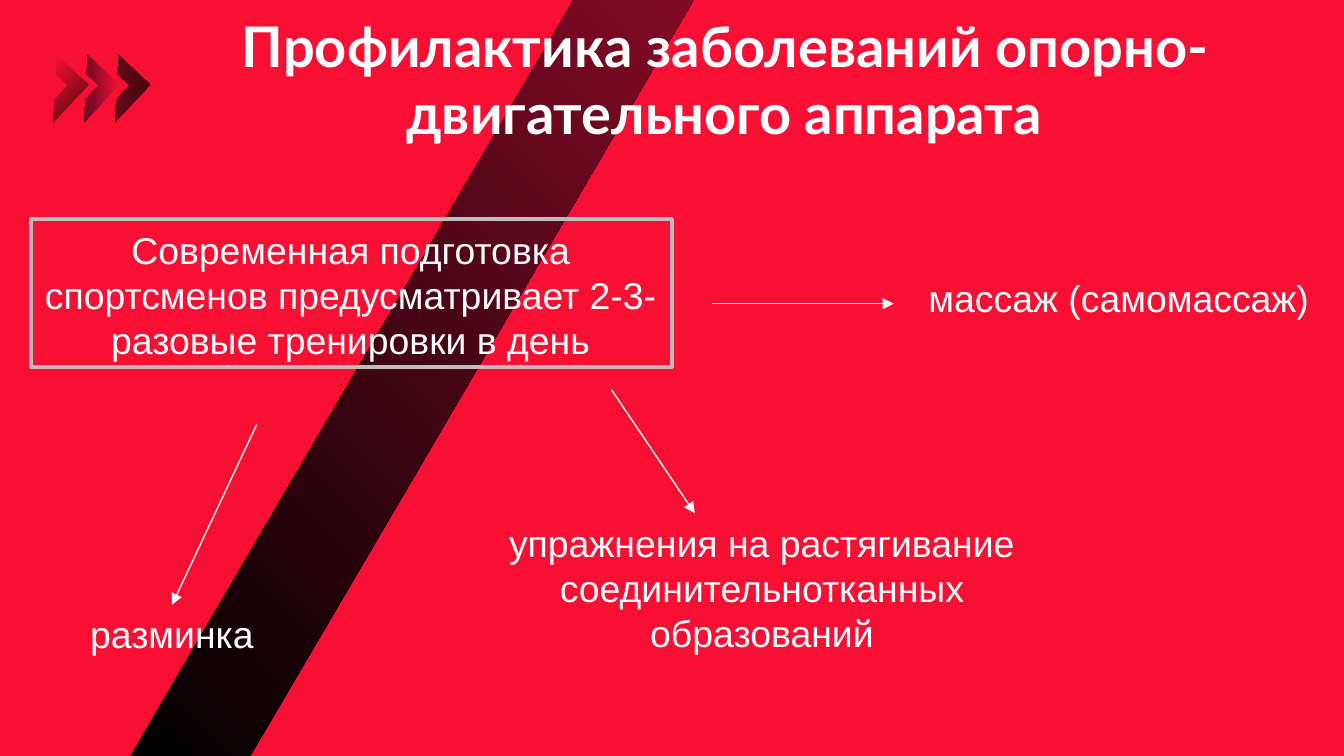
from dataclasses import dataclass

from lxml import etree
from pptx import Presentation
from pptx.dml.color import RGBColor
from pptx.enum.shapes import MSO_CONNECTOR, MSO_SHAPE
from pptx.enum.text import MSO_ANCHOR, PP_ALIGN
from pptx.oxml.ns import qn
from pptx.util import Inches, Pt

BAND, CHEVRON, FRAME = MSO_SHAPE.PARALLELOGRAM, MSO_SHAPE.HALF_FRAME, MSO_SHAPE.RECTANGLE
STRAIGHT = MSO_CONNECTOR.STRAIGHT
CENTER, MIDDLE = PP_ALIGN.CENTER, MSO_ANCHOR.MIDDLE


@dataclass(frozen=True)
class Theme:
    red: str = "F81034"
    wine: str = "810A26"
    dark: str = "420909"
    black: str = "000000"
    white: str = "FFFFFF"
    arrow: str = "F9F9F9"
    frame: str = "BDBDBD"
    title_font: str = "Lato"
    body_font: str = "Arial"
    title_size: int = 30
    body_size: int = 20


THEME = Theme()

# Gradient stops and angle of each chevron, from left to right
CHEVRONS = [
    ([(0, THEME.red), (79, THEME.red), (100, THEME.dark)], 90),
    ([(0, THEME.red), (28, THEME.red), (100, THEME.dark)], 180),
    ([(0, THEME.red), (43, THEME.wine), (100, THEME.dark)], 45),
    ([(0, THEME.red), (9, THEME.wine), (100, THEME.dark)], 225),
]
LABELS = [
    ("Современная подготовка спортсменов предусматривает 2-3-разовые тренировки в день",
     (0.11, 1.64, 5, 1.11)),
    ("разминка", (-0.17, 4.5, 2.9, 0.44)),
    ("упражнения на растягивание соединительнотканных образований",
     (3.32, 3.82, 4.7, 1.11)),
    ("массаж (самомассаж)", (6.43, 2, 3.79, 0.44)),
]
ARROWS = [(5.3, 2.26, 6.65, 2.26), (4.55, 2.9, 5.17, 3.82), (1.91, 3.16, 1.28, 4.5)]


def inches(values):
    return [Inches(value) for value in values]


def set_gradient(shape, stops, angle=None):
    """Fill with a linear gradient, or from the top right corner if no angle is given."""
    shape.fill.gradient()
    gradient = shape._element.spPr.find(qn("a:gradFill"))
    for child in list(gradient):
        gradient.remove(child)
    stop_list = etree.SubElement(gradient, qn("a:gsLst"))
    for percent, color in stops:
        stop = etree.SubElement(stop_list, qn("a:gs"), pos=str(percent * 1000))
        etree.SubElement(stop, qn("a:srgbClr"), val=color)
    if angle is not None:
        etree.SubElement(gradient, qn("a:lin"), ang=str(angle * 60000), scaled="0")
    else:
        circle = etree.SubElement(gradient, qn("a:path"), path="circle")
        etree.SubElement(circle, qn("a:fillToRect"), l="100000", b="100000")


def add_plain_shape(shapes, kind, place):
    shape = shapes.add_shape(kind, *inches(place))
    shape.shadow.inherit = False
    shape.line.fill.background()
    return shape


def add_band(page, height):
    band = add_plain_shape(page.shapes, BAND, (0.97, 0, 4.19, 5.62))
    band.height = height
    band.adjustments[0] = 0.787
    set_gradient(band, [(0, THEME.wine), (100, THEME.black)])
    page.shapes._spTree.insert(2, band._element)  # behind the title


def add_chevrons(page):
    group = page.shapes.add_group_shape()
    for index, (stops, angle) in enumerate(CHEVRONS):
        chevron = add_plain_shape(group.shapes, CHEVRON, (0.02 + index * 0.23, 0.47, 0.32, 0.38))
        chevron.rotation = 43.1
        chevron._element.spPr.find(qn("a:xfrm")).set("flipH", "1")
        set_gradient(chevron, stops, angle)


def write_text(box, text, **font):
    box.text_frame.word_wrap = True
    para = box.text_frame.paragraphs[0]
    para.alignment = CENTER
    span = para.add_run()
    span.text = text
    span.font.color.rgb = RGBColor.from_string(THEME.white)
    for name, value in font.items():
        setattr(span.font, name, value)


def add_title(page, text):
    title = page.shapes.title
    title.left, title.top, title.width, title.height = inches((1.19, 0, 8.4, 1.17))
    frame = title.text_frame
    frame.vertical_anchor = MIDDLE
    for side in ("left", "top", "right", "bottom"):
        setattr(frame, f"margin_{side}", Inches(0.1))
    write_text(title, text, name=THEME.title_font, size=Pt(THEME.title_size), bold=True)


def add_label(page, text, place):
    box = page.shapes.add_textbox(*inches(place))
    write_text(box, text, name=THEME.body_font, size=Pt(THEME.body_size))


def add_arrow(page, ends):
    arrow = page.shapes.add_connector(STRAIGHT, *inches(ends))
    arrow.line.color.rgb = RGBColor.from_string(THEME.arrow)
    arrow.line.width = Pt(0.75)
    etree.SubElement(arrow.line._get_or_add_ln(), qn("a:tailEnd"), type="triangle")
    etree.SubElement(arrow._element.spPr, qn("a:effectLst"))


def add_frame(page, place):
    frame = add_plain_shape(page.shapes, FRAME, place)
    frame.fill.background()
    frame.line.color.rgb = RGBColor.from_string(THEME.frame)
    frame.line.width = Pt(2)


def main():
    deck = Presentation()
    deck.slide_width = Inches(10)
    deck.slide_height = deck.slide_width * 9 // 16
    page = deck.slides.add_slide(deck.slide_layouts[5])
    page.background.fill.solid()
    page.background.fill.fore_color.rgb = RGBColor.from_string(THEME.red)

    add_band(page, deck.slide_height)
    add_title(page, "Профилактика заболеваний опорно-двигательного аппарата")
    add_chevrons(page)
    for text, place in LABELS:
        add_label(page, text, place)
    for ends in ARROWS:
        add_arrow(page, ends)
    add_frame(page, (0.23, 1.63, 4.77, 1.1))
    deck.save("out.pptx")


if __name__ == "__main__":
    main()
